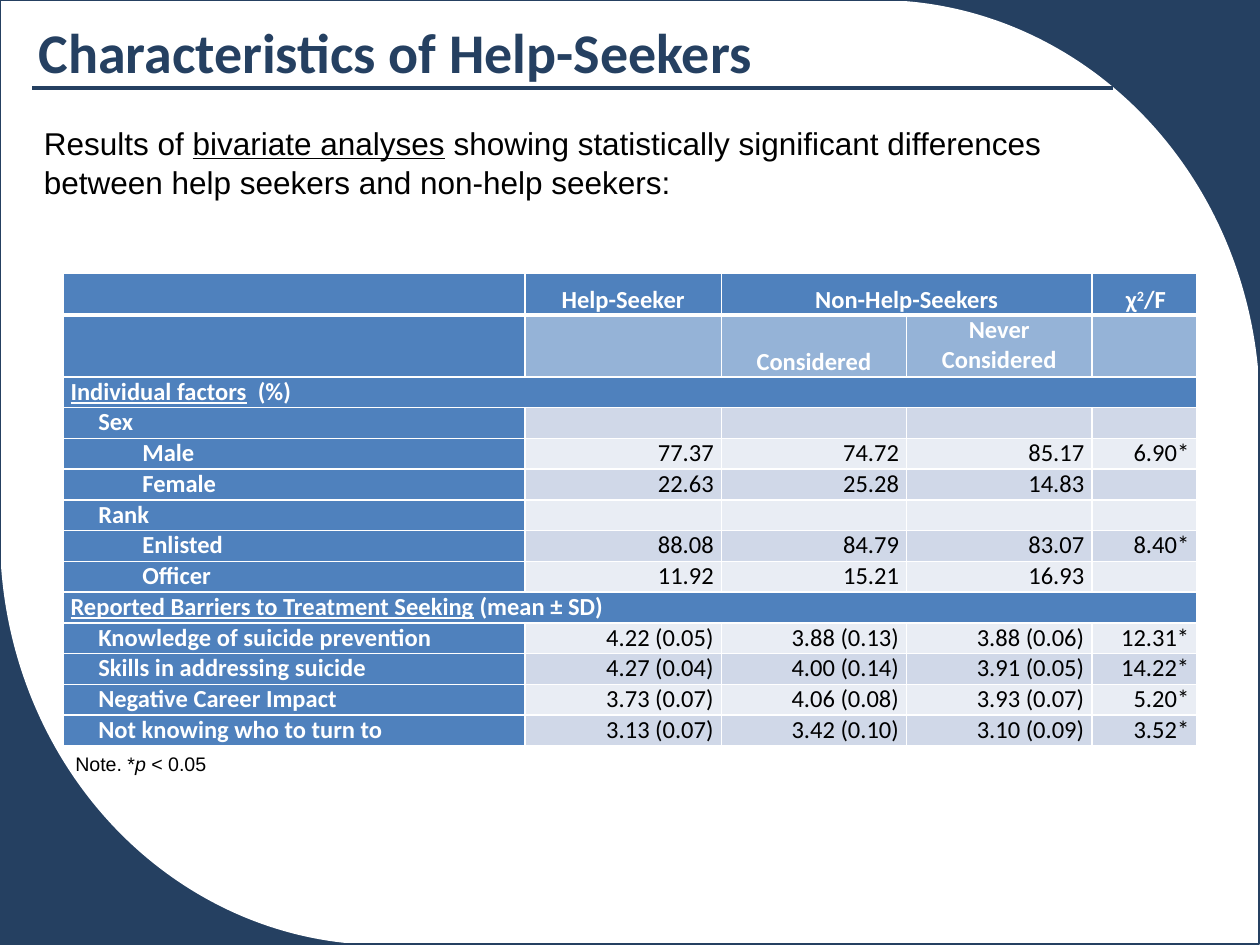
"""Build the slide on the characteristics of help-seekers, with its results table."""
from lxml import etree
from pptx import Presentation
from pptx.dml.color import RGBColor
from pptx.enum.shapes import MSO_CONNECTOR, MSO_SHAPE
from pptx.enum.text import MSO_ANCHOR, PP_ALIGN
from pptx.oxml.ns import qn
from pptx.util import Inches, Pt

RECTANGLE, OVAL = MSO_SHAPE.RECTANGLE, MSO_SHAPE.OVAL
STRAIGHT = MSO_CONNECTOR.STRAIGHT
TOP, BOTTOM = MSO_ANCHOR.TOP, MSO_ANCHOR.BOTTOM
LEFT, CENTER, RIGHT = PP_ALIGN.LEFT, PP_ALIGN.CENTER, PP_ALIGN.RIGHT

NAVY = RGBColor(0x25, 0x40, 0x61)
WHITE = RGBColor(0xFF, 0xFF, 0xFF)
BLACK = RGBColor(0x00, 0x00, 0x00)
BLUE = RGBColor(0x4F, 0x81, 0xBD)
LIGHT_BLUE = RGBColor(0x95, 0xB3, 0xD7)
BANDS = [RGBColor(0xD0, 0xD8, 0xE8), RGBColor(0xE9, 0xED, 0xF4)]

COLUMNS, ROWS = 120, 90
UNIT = Inches(10) / COLUMNS


def grid(*steps):
    return [round(step * UNIT) for step in steps]


def write(paragraph, parts, size, font, color, bold=False):
    for text, style in parts:
        run = paragraph.add_run()
        run.text = text
        run.font.size, run.font.name, run.font.bold = Pt(size), font, bold
        run.font.color.rgb = color
        if style == "underline":
            run.font.underline = True
        elif style == "italic":
            run.font.italic = True
        elif style == "superscript":
            run.font._element.set("baseline", "30000")


prs = Presentation()
prs.slide_width, prs.slide_height = grid(COLUMNS, ROWS)
slide = prs.slides.add_slide(prs.slide_layouts[6])
shapes = slide.shapes

backdrop = [
    (RECTANGLE, (0, 48, 44, 42), NAVY),
    (OVAL, (0, 12, 73, 78), WHITE),
    (RECTANGLE, (76, 0, 44, 42), NAVY),
    (OVAL, (47, 0, 73, 78), WHITE),
    (RECTANGLE, (37, 85, 20, 5), WHITE),
    (RECTANGLE, (63, 0, 20, 5), WHITE),
    (RECTANGLE, (115, 38, 5, 20), WHITE),
]
for outline, area, color in backdrop:
    piece = shapes.add_shape(outline, *grid(*area))
    piece.shadow.inherit = False
    piece.fill.solid()
    piece.fill.fore_color.rgb = color
    piece.line.fill.background()

frame = shapes.add_shape(RECTANGLE, *grid(0, 0, COLUMNS - 0.1, ROWS - 0.1))
frame.shadow.inherit = False
frame.fill.background()
frame.line.color.rgb = NAVY
frame.line.width = Pt(0.75)

intro = shapes.add_textbox(*grid(3, 11, 108, 61.8)).text_frame
intro.word_wrap = True
intro.paragraphs[0].line_spacing = 1.05
write(intro.paragraphs[0], [
    ("Results of ", None),
    ("bivariate analyses", "underline"),
    (" showing statistically significant differences between help seekers and non-help seekers:", None),
], 18, "Arial", BLACK)

contents = [
    ["", "Help-Seeker", "Non-Help-Seekers", "", ""],
    ["", "", "Considered", "Never Considered", ""],
    ["", "", "", "", ""],
    ["Sex", "", "", "", ""],
    ["Male", "77.37", "74.72", "85.17", "6.90*"],
    ["Female", "22.63", "25.28", "14.83", ""],
    ["Rank", "", "", "", ""],
    ["Enlisted", "88.08", "84.79", "83.07", "8.40*"],
    ["Officer", "11.92", "15.21", "16.93", ""],
    ["", "", "", "", ""],
    ["Knowledge of suicide prevention", "4.22 (0.05)", "3.88 (0.13)", "3.88 (0.06)", "12.31*"],
    ["Skills in addressing suicide", "4.27 (0.04)", "4.00 (0.14)", "3.91 (0.05)", "14.22*"],
    ["Negative Career Impact", "3.73 (0.07)", "4.06 (0.08)", "3.93 (0.07)", "5.20*"],
    ["Not knowing who to turn to", "3.13 (0.07)", "3.42 (0.10)", "3.10 (0.09)", "3.52*"],
]
mixed = {
    (0, 4): [(" ", "superscript"), ("χ", None), ("2", "superscript"), ("/F", None)],
    (2, 0): [("Individual factors", "underline"), ("  (%)", None)],
    (9, 0): [("Reported Barriers to Treatment Seeking", "underline"), (" (mean ± SD)", None)],
}
sections = (2, 9)
subgroups = ("Male", "Female", "Enlisted", "Officer")
column_widths = grid(44, 18.7, 17.65, 17.65, 10)
row_heights = grid(4, 5.9, *[2.93] * 12)

results = shapes.add_table(len(row_heights), len(column_widths), *grid(6, 26, 108, 45.1)).table
results.first_row = results.horz_banding = False
for column, width in zip(results.columns, column_widths):
    column.width = width
for row, height in zip(results.rows, row_heights):
    row.height = height

for r, texts in enumerate(contents):
    for c, text in enumerate(texts):
        cell = results.cell(r, c)
        cell.margin_left = cell.margin_right = Inches(0.06)
        cell.margin_top = cell.margin_bottom = 0
        heading = r < 2
        cell.vertical_anchor = BOTTOM if heading and text != "Never Considered" else TOP

        properties = cell._tc.get_or_add_tcPr()
        for side in ("lnL", "lnR", "lnT", "lnB"):
            thick = (r, side) in ((0, "lnB"), (1, "lnT"))
            border = etree.SubElement(properties, qn("a:" + side), w=str(Pt(3 if thick else 1)))
            paint = etree.SubElement(border, qn("a:solidFill"))
            etree.SubElement(paint, qn("a:srgbClr"), val=str(WHITE))

        labelled = heading or c == 0
        cell.fill.solid()
        if c == 0 or r == 0 or r in sections:
            cell.fill.fore_color.rgb = BLUE
        else:
            cell.fill.fore_color.rgb = LIGHT_BLUE if r == 1 else BANDS[(r + 1) % 2]

        line = cell.text_frame.paragraphs[0]
        line.alignment = CENTER if heading else LEFT if c == 0 else RIGHT
        if c == 0 and text:
            indent = 0.57 if text in subgroups else 0.22
            line._p.get_or_add_pPr().set("marL", str(Inches(indent)))
        parts = mixed.get((r, c), [(text, None)] if text else [])
        write(line, parts, 14, "Calibri", WHITE if labelled else BLACK, labelled)
        if not parts:
            etree.SubElement(line._p, qn("a:endParaRPr"), sz="1400")

results.cell(0, 2).merge(results.cell(0, 3))
for r in sections:
    results.cell(r, 0).merge(results.cell(r, 4))

title = shapes.add_textbox(*grid(2, 3, 87, 5.8)).text_frame
title.word_wrap = True
title.paragraphs[0].line_spacing = Pt(27)
title.paragraphs[0]._p.get_or_add_pPr().set("marL", str(Inches(0.04)))
write(title.paragraphs[0], [("Characteristics of Help-Seekers", None)], 32, "Calibri", NAVY, True)

note = shapes.add_textbox(*grid(6, 71, 15.1, 3.5)).text_frame
note.word_wrap = False
write(note.paragraphs[0], [("Note. *", None), ("p", "italic"), (" < 0.05", None)], 11.2, "Arial", BLACK)

title_rule = shapes.add_connector(STRAIGHT, *grid(106, 8.4, 3, 8.4))
title_rule.line.color.rgb = NAVY
title_rule.line.width = Pt(2.5)
etree.SubElement(title_rule._element.spPr, qn("a:effectLst"))

prs.save("out.pptx")
